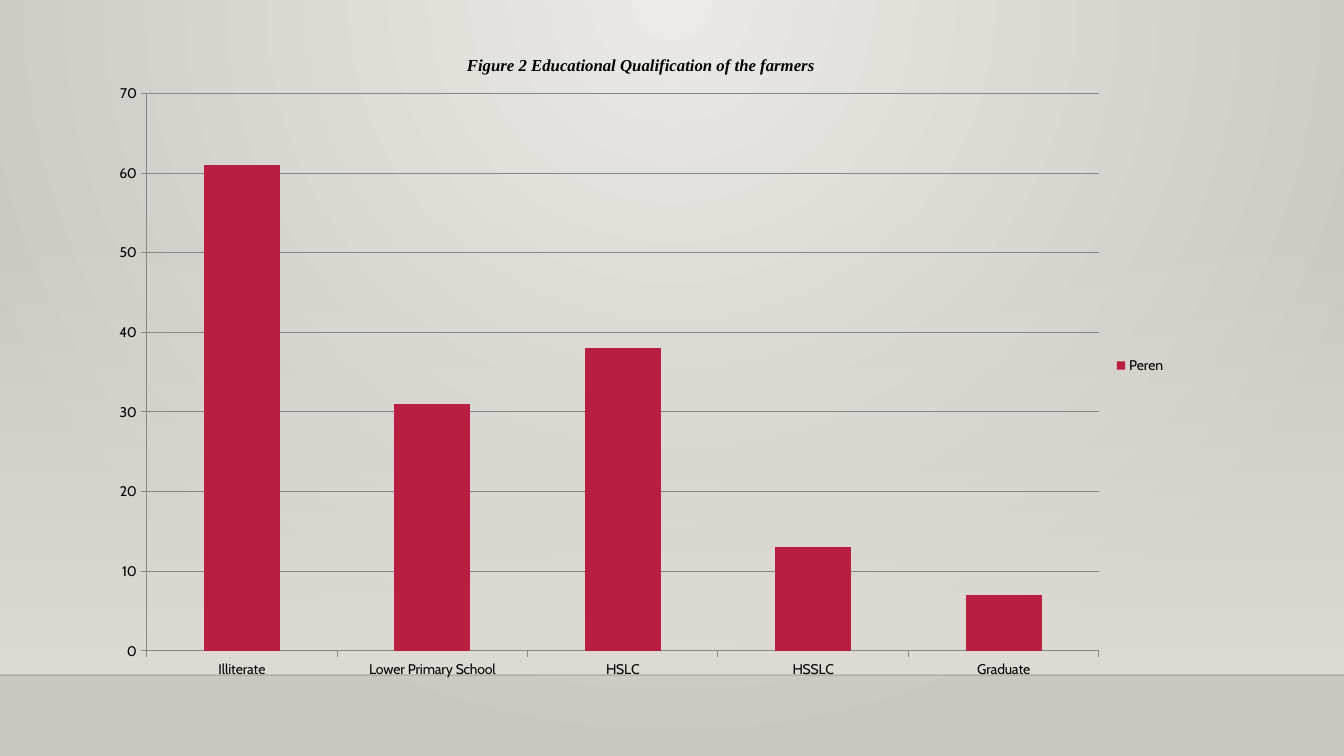
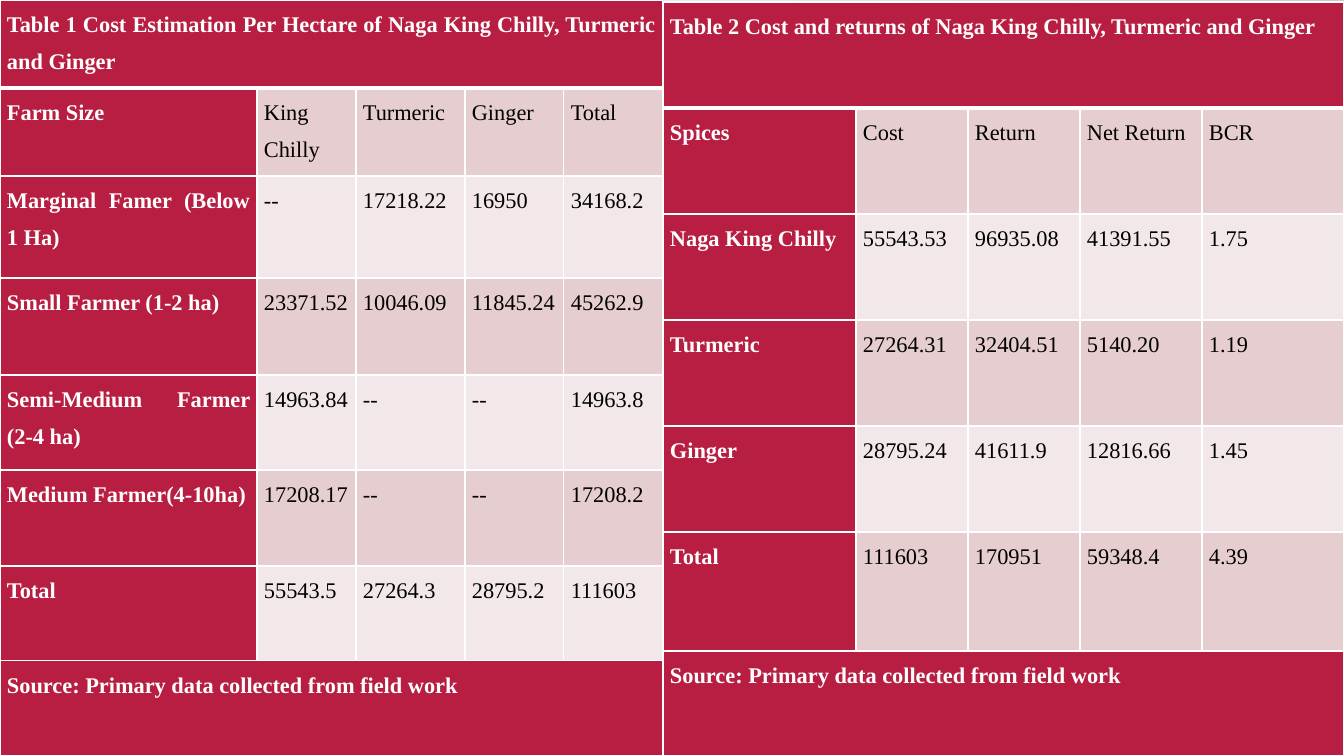
from pptx import Presentation as Deck
from pptx.chart.data import CategoryChartData as Data
from pptx.dml.color import RGBColor as Rgb
from pptx.enum.chart import XL_CHART_TYPE as Kind, XL_LEGEND_POSITION as Side
from pptx.enum.chart import XL_TICK_MARK as Tick
from pptx.enum.shapes import MSO_CONNECTOR as Conn, MSO_SHAPE as Form
from pptx.enum.text import PP_ALIGN as Align
from pptx.oxml import parse_xml
from pptx.oxml.ns import nsdecls
from pptx.util import Pt

WIDE, HIGH = 1344, 756
SCALE = 914400 / 100.8
HUES = {
    "glow": "ECEAE7", "edge": "CAC7C1", "band": "DFDBD5", "rule": "000001",
    "red": "B71E42", "rose": "E6CDCF", "pale": "F3E8E9",
    "ink": "000000", "white": "FFFFFF", "grid": "878787",
}
SERIF = "Times New Roman"
CELL = {"name": SERIF, "size": Pt(16)}
TITLE = {"name": SERIF, "size": Pt(12), "bold": True, "italic": True}
LABEL = {"name": "Cabin", "size": Pt(10)}


def px(num):
    return round(num * SCALE)


def hue(name):
    return Rgb.from_string(HUES[name])


def put(obj, vals):
    for key, val in vals.items():
        setattr(obj, key, val)


def style(font, vals, name="ink"):
    put(font, vals)
    font.color.rgb = hue(name)


def node(tag, inner="", attrs=""):
    return parse_xml(f"<{tag} {nsdecls('a', 'c')} {attrs}>{inner}</{tag}>")


def blend(fill, names):
    fill.gradient()
    for pos, (stop, name) in enumerate(zip(fill.gradient_stops, names)):
        stop.position = pos
        stop.color.rgb = hue(name)


def fade(item, pct):
    # Make the first plain colour of a shape see-through
    first = item.element.xpath(".//p:spPr//a:srgbClr")[0]
    first.append(node("a:alpha", attrs=f'val="{pct * 1000}"'))


# Backdrop shared by all slides
def scene(deck):
    slide = deck.slides.add_slide(deck.slide_layouts[6])
    blend(slide.background.fill, ["glow", "edge"])
    lin = slide.element.xpath(".//p:bg//a:lin")[0]
    rect = '<a:fillToRect l="43000" t="0" r="43000" b="100000"/>'
    lin.getparent().replace(lin, node("a:path", rect, 'path="circle"'))

    top, base = 223, 675
    band = slide.shapes.add_shape(
        Form.RECTANGLE, 0, px(top), px(WIDE), px(base - top))
    band.shadow.inherit = False
    band.line.fill.background()
    blend(band.fill, ["band", "band"])
    band.fill.gradient_angle = 270
    fade(band, 0)

    rule = slide.shapes.add_connector(
        Conn.STRAIGHT, 0, px(base), px(WIDE), px(base))
    rule.line.width = Pt(1)
    rule.line.color.rgb = hue("rule")
    rule.element.spPr.append(node("a:effectLst"))
    fade(rule, 20)
    return slide


# Column chart
def graph(slide, box, title, name, rows):
    data = Data()
    data.categories = list(rows)
    data.add_series(name, list(rows.values()))
    chart = slide.shapes.add_chart(
        Kind.COLUMN_CLUSTERED, *map(px, box), data).chart
    style(chart.font, LABEL)

    chart.has_title = True
    text = chart.chart_title.text_frame
    text.text = title
    style(text.paragraphs[0].runs[0].font, TITLE)

    chart.has_legend = True
    put(chart.legend, {"position": Side.RIGHT, "include_in_layout": False})

    plot = chart.plots[0]
    put(plot, {"gap_width": 150, "vary_by_categories": False})
    fill = plot.series[0].format.fill
    fill.solid()
    fill.fore_color.rgb = hue("red")

    put(chart.value_axis, {"minimum_scale": 0, "maximum_scale": 70,
                           "major_unit": 10, "has_major_gridlines": True})
    for axis in (chart.category_axis, chart.value_axis):
        axis.major_tick_mark = Tick.OUTSIDE
        axis.format.line.color.rgb = hue("grid")
    chart.value_axis.major_gridlines.format.line.color.rgb = hue("grid")

    # Fixed place of the plot area
    area = chart.element.xpath(".//c:plotArea")[0]
    for old in area.xpath("./c:layout"):
        area.remove(old)
    parts = {"layoutTarget": "inner", "xMode": "edge", "yMode": "edge",
             "x": 0.038, "y": 0.091, "w": 0.89, "h": 0.838}
    inner = "".join(f'<c:{key} val="{val}"/>' for key, val in parts.items())
    area.insert(0, node("c:layout", f"<c:manualLayout>{inner}</c:manualLayout>"))


def frame(cell, row):
    # White borders, thick below the heading row
    props = cell._tc.get_or_add_tcPr()
    paint = (f'<a:solidFill><a:srgbClr val="{HUES["white"]}"/></a:solidFill>')
    for side in "LRTB":
        thick = (row, side) in ((0, "B"), (1, "T"))
        width = Pt(3 if thick else 1)
        props.append(node(f"a:ln{side}", paint, f'w="{width}"'))


# Table with a heading row, a source row and a red first column
def sheet(slide, spot, cols, highs, rows):
    box = (*spot, sum(cols), sum(highs))
    table = slide.shapes.add_table(len(rows), len(cols), *map(px, box)).table
    put(table, {"first_row": False, "horz_banding": False})
    for col, wide in zip(table.columns, cols):
        col.width = px(wide)
    for line, high in zip(table.rows, highs):
        line.height = px(high)

    for i, row in enumerate(rows):
        if len(row) == 1:
            table.cell(i, 0).merge(table.cell(i, len(cols) - 1))
        for j in range(len(cols)):
            cell = table.cell(i, j)
            head = j == 0 or len(row) == 1
            frame(cell, i)
            put(cell, {"margin_left": px(7), "margin_right": px(7),
                       "margin_top": 0, "margin_bottom": 0})
            cell.fill.solid()
            tint = "red" if head else "rose" if i % 2 else "pale"
            cell.fill.fore_color.rgb = hue(tint)
            if j < len(row):
                para = cell.text_frame.paragraphs[0]
                put(para, {"alignment": Align.JUSTIFY, "line_spacing": 1.5})
                run = para.add_run()
                run.text = row[j]
                style(run.font, {**CELL, "bold": head},
                      "white" if head else "ink")


SOURCE = ["Source: Primary data collected from field work"]
LEVELS = {"Illiterate": 61, "Lower Primary School": 31, "HSLC": 38,
          "HSSLC": 13, "Graduate": 7}
COSTS = [
    ["Table 1 Cost Estimation Per Hectare of Naga King Chilly, "
     "Turmeric and Ginger"],
    ["Farm Size", "King Chilly", "Turmeric", "Ginger", "Total"],
    ["Marginal Famer (Below 1 Ha)", "--", "17218.22", "16950", "34168.2"],
    ["Small Farmer (1-2 ha)", "23371.52", "10046.09", "11845.24", "45262.9"],
    ["Semi-Medium Farmer (2-4 ha)", "14963.84", "--", "--", "14963.8"],
    ["Medium Farmer(4-10ha)", "17208.17", "--", "--", "17208.2"],
    ["Total", "55543.5", "27264.3", "28795.2", "111603"],
    SOURCE,
]
GAINS = [
    ["Table 2 Cost and returns of Naga King Chilly, Turmeric and Ginger"],
    ["Spices", "Cost", "Return", "Net Return", "BCR"],
    ["Naga King Chilly", "55543.53", "96935.08", "41391.55", "1.75"],
    ["Turmeric", "27264.31", "32404.51", "5140.20", "1.19"],
    ["Ginger", "28795.24", "41611.9", "12816.66", "1.45"],
    ["Total", "111603", "170951", "59348.4", "4.39"],
    SOURCE,
]


def main():
    deck = Deck()
    put(deck, {"slide_width": px(WIDE), "slide_height": px(HIGH)})

    graph(scene(deck), (106, 33, 1070, 665),
          "Figure 2 Educational Qualification of the farmers",
          "Peren", LEVELS)

    slide = scene(deck)
    sheet(slide, (0, 0), [257, 99, 109, 99, 99],
          [88, 88, 102, 97, 95, 96, 95, 95], COSTS)
    sheet(slide, (663, 2), [193, 112, 112, 122, 142],
          [106] * 5 + [119, 105], GAINS)

    deck.save("out.pptx")


if __name__ == "__main__":
    main()
